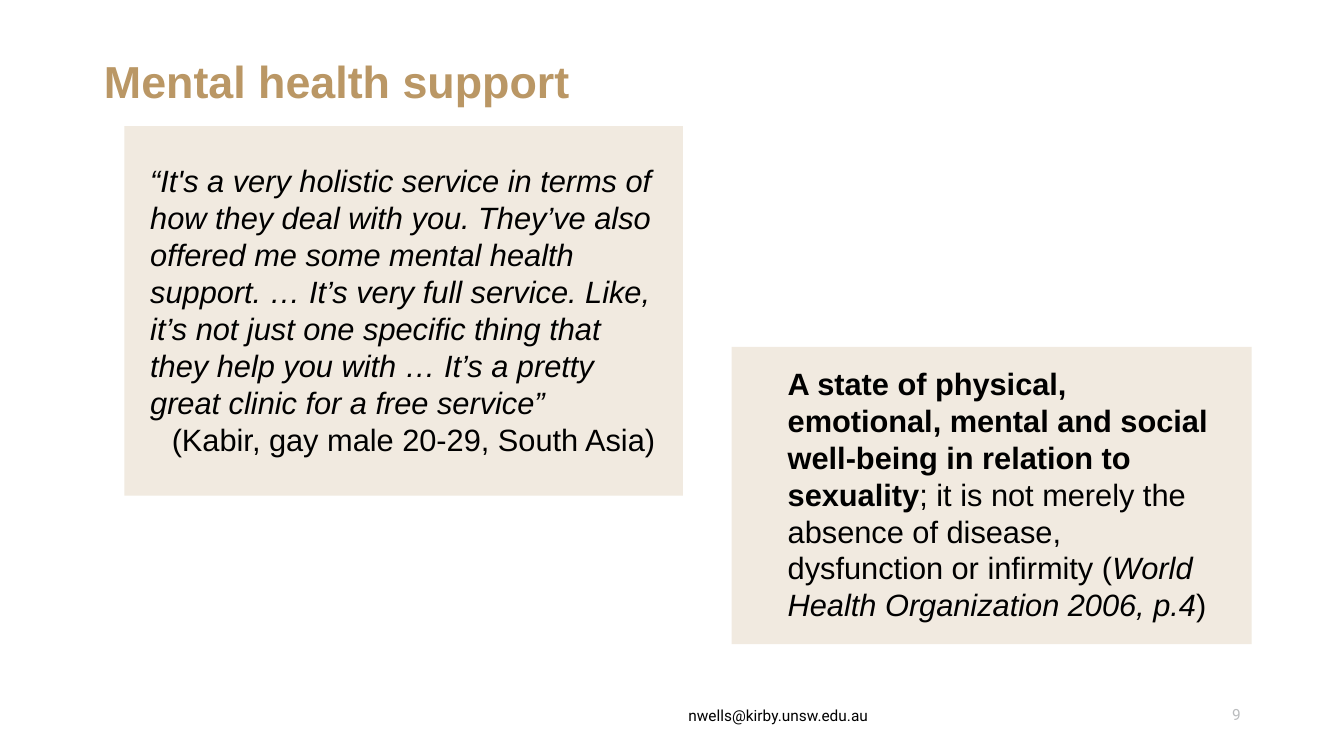
from dataclasses import dataclass

from pptx import Presentation
from pptx.dml.color import RGBColor
from pptx.enum.shapes import MSO_SHAPE
from pptx.enum.text import MSO_ANCHOR, PP_ALIGN
from pptx.shapes.shapetree import GroupShapes, SlideShapes
from pptx.util import Inches, Pt

WIDE, HIGH = Inches(13.333), Inches(7.5)
COLS, ROWS = 16, 9
GOLD, SAND, BLACK, GREY = "BA9765", "F1EAE0", "000000", "BABCBE"


@dataclass(frozen=True)
class Area:
    col: float
    row: float
    cols: float
    rows: float

    def place(self) -> tuple[int, int, int, int]:
        return (
            round(WIDE * self.col / COLS),
            round(HIGH * self.row / ROWS),
            round(WIDE * self.cols / COLS),
            round(HIGH * self.rows / ROWS),
        )


@dataclass(frozen=True)
class Run:
    text: str
    bold: bool = False
    slant: bool = False


@dataclass(frozen=True)
class Para:
    runs: tuple[Run, ...]
    align: PP_ALIGN = PP_ALIGN.LEFT


@dataclass(frozen=True)
class Label:
    area: Area
    paras: tuple[Para, ...]
    size: int = 22
    color: str = BLACK
    font: str = "Arial"
    anchor: MSO_ANCHOR = MSO_ANCHOR.TOP


@dataclass(frozen=True)
class Card:
    area: Area
    label: Label


def paint(code: str) -> RGBColor:
    return RGBColor.from_string(code)


def write(shapes: SlideShapes | GroupShapes, label: Label) -> None:
    frame = shapes.add_textbox(*label.area.place()).text_frame
    frame.word_wrap = True
    frame.vertical_anchor = label.anchor
    for index, para in enumerate(label.paras):
        line = frame.add_paragraph() if index else frame.paragraphs[0]
        line.alignment = para.align
        for part in para.runs:
            run = line.add_run()
            run.text = part.text
            run.font.name = label.font
            run.font.size = Pt(label.size)
            run.font.bold = part.bold
            run.font.italic = part.slant
            run.font.color.rgb = paint(label.color)


def draw(shapes: SlideShapes, card: Card) -> None:
    group = shapes.add_group_shape().shapes
    panel = group.add_shape(MSO_SHAPE.RECTANGLE, *card.area.place())
    panel.shadow.inherit = False
    panel.fill.solid()
    panel.fill.fore_color.rgb = paint(SAND)
    panel.line.fill.background()
    write(group, card.label)


TITLE = Label(
    Area(1.12, 0.58, 9.38, 0.77),
    (Para((Run("Mental health support", bold=True),)),),
    size=32,
    color=GOLD,
)

FOOTER = (
    Label(
        Area(5.3, 8.28, 7.93, 0.48),
        (Para((Run("nwells@kirby.unsw.edu.au"),), PP_ALIGN.CENTER),),
        size=11,
        font="Roboto",
        anchor=MSO_ANCHOR.MIDDLE,
    ),
    Label(
        Area(13.73, 8.26, 1.16, 0.48),
        (Para((Run("9"),), PP_ALIGN.RIGHT),),
        size=11,
        color=GREY,
        font="Roboto",
        anchor=MSO_ANCHOR.MIDDLE,
    ),
)

CARDS = (
    Card(
        Area(8.71, 4.13, 6.19, 3.54),
        Label(
            Area(9.26, 4.28, 5.33, 3.23),
            (
                Para((
                    Run(
                        "A state of physical, emotional, mental and social "
                        "well-being in relation to sexuality",
                        bold=True,
                    ),
                    Run(
                        "; it is not merely the absence of disease, "
                        "dysfunction or infirmity ("
                    ),
                    Run("World Health Organization 2006, p.4", slant=True),
                    Run(")"),
                )),
            ),
        ),
    ),
    Card(
        Area(1.48, 1.5, 6.65, 4.4),
        Label(
            Area(1.67, 1.87, 6.25, 3.67),
            (
                Para((
                    Run(
                        "“It's a very holistic service in terms of how they "
                        "deal with you. They’ve also offered me some mental "
                        "health support. … It’s very full service. Like, "
                        "it’s not just one specific thing that they help you "
                        "with … It’s a pretty great clinic for a free service”",
                        slant=True,
                    ),
                )),
                Para(
                    (Run("(Kabir, gay male 20-29, South Asia)"),),
                    PP_ALIGN.RIGHT,
                ),
            ),
        ),
    ),
)


def main() -> None:
    deck = Presentation()
    deck.slide_width, deck.slide_height = WIDE, HIGH
    shapes = deck.slides.add_slide(deck.slide_layouts[6]).shapes
    for label in (*FOOTER, TITLE):
        write(shapes, label)
    for card in CARDS:
        draw(shapes, card)
    deck.save("out.pptx")


if __name__ == "__main__":
    main()
